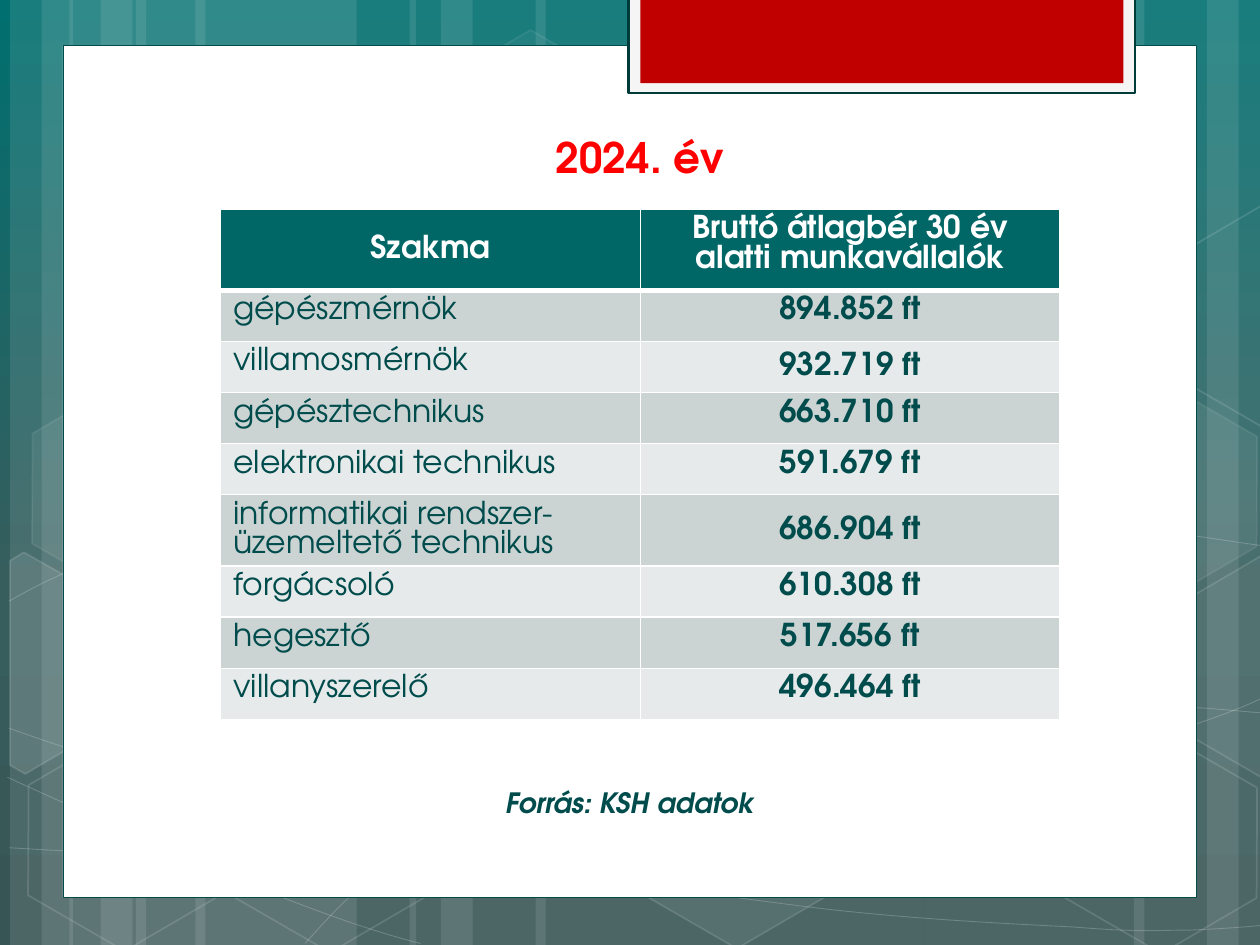
from math import cos, radians, sin

from lxml import etree
from pptx import Presentation
from pptx.dml.color import RGBColor
from pptx.enum.shapes import MSO_SHAPE
from pptx.enum.text import MSO_ANCHOR, PP_ALIGN
from pptx.oxml.ns import qn
from pptx.util import Cm, Pt

RECTANGLE, HEXAGON = MSO_SHAPE.RECTANGLE, MSO_SHAPE.HEXAGON
TOP, MIDDLE = MSO_ANCHOR.TOP, MSO_ANCHOR.MIDDLE
LEFT, CENTER = PP_ALIGN.LEFT, PP_ALIGN.CENTER

FONT = "TeX Gyre Adventor"
TILT = 30
WHITE = RGBColor(0xFF, 0xFF, 0xFF)
RED = RGBColor(0xFF, 0x00, 0x00)
DARK_RED = RGBColor(0xC0, 0x00, 0x00)
PALE_GREY = RGBColor(0xF5, 0xF5, 0xF5)
DARK_TEAL = RGBColor(0x00, 0x4C, 0x4C)
DEEP_TEAL = RGBColor(0x00, 0x3B, 0x3C)
HEADER_TEAL = RGBColor(0x00, 0x66, 0x66)
BANDS = RGBColor(0xCC, 0xD3, 0xD3), RGBColor(0xE7, 0xEA, 0xEA)
GRADIENT = (0, RGBColor(0x00, 0x6F, 0x6F)), (62, RGBColor(0x37, 0x5D, 0x5D)), (100, RGBColor(0x38, 0x55, 0x55))

# left, width
STRIPS = [
    (2.74, 4.45), (0.2, 1.27), (0.84, 2.11), (3.94, 4.45), (1.4, 1.27), (2.03, 2.11),
    (18.62, 4.45), (24.33, 1.27), (22.86, 2.11), (10.8, 7.82), (8.26, 1.27), (8.89, 2.11),
]
# start point, then three points for each Bezier segment
CURVES = [
    [(0.18, 17.09), (1.55, 17.17), (2.92, 17.25), (4.83, 17.22), (6.73, 17.2), (9.09, 17.15), (11.63, 16.89),
     (14.17, 16.64), (17.78, 16.13), (20.12, 15.67), (22.43, 15.19), (24.82, 14.43), (25.58, 14)],
    [(0.18, 12.12), (0.91, 11.71), (1.65, 11.33), (3.07, 10.95), (4.52, 10.57), (6.58, 10.01), (8.81, 9.83),
     (11.07, 9.65), (13.82, 9.63), (16.61, 9.83), (19.41, 10.03), (24.05, 10.82), (25.58, 11.02)],
    [(0.15, 15.67), (3.23, 17.07), (6.27, 18.47), (8.48, 19.02)],
    [(0.18, 14.68), (0.97, 14.96), (1.78, 15.24), (3.25, 15.65), (4.72, 16.03), (6.93, 16.66), (9.07, 17.09),
     (11.18, 17.53), (13.84, 17.98), (15.95, 18.24), (18.06, 18.52), (20.32, 18.62), (21.67, 18.69),
     (22.99, 18.8), (23.34, 18.75), (24, 18.75), (24.66, 18.72), (25.12, 18.69), (25.58, 18.64)],
    [(6.15, 19.02), (6.6, 18.52), (7.06, 18.01), (7.67, 17.55), (8.28, 17.09), (9.14, 16.61), (9.86, 16.23),
     (10.57, 15.88), (11, 15.72), (11.94, 15.47), (12.85, 15.21), (14.55, 14.86), (15.44, 14.68),
     (16.36, 14.5), (16.48, 14.5), (17.27, 14.45), (18.06, 14.38), (19.3, 14.3), (20.17, 14.27),
     (21.06, 14.25), (22.5, 14.27), (24.21, 14.27), (24.66, 14.3), (25.1, 14.35), (25.55, 14.38)],
]
# left, top, fill opacity, line opacity
HEXAGONS = [
    (8.48, 0.91, 4, 8), (12.62, 14.96, 6, 12), (0.28, 15.01, 0, 12), (0.36, 7.92, 7, 8),
    (4.42, 15.04, 0, 12), (19.13, 11.51, 10, 12), (21.18, 15.06, 0, 12), (21.18, 7.98, 7, 8),
]
# fill opacity, centre of the tilt, corners as they show
CUT_HEXAGONS = [
    (10, (0.91, 13.59), [(0.2, 11.3), (0.48, 11.13), (2.44, 12.24), (2.41, 14.48), (0.51, 15.6), (0.2, 15.42)]),
    (4, (25.02, 13.21), [(23.52, 12.32), (25.43, 11.2), (25.63, 11.33), (25.63, 15.57), (25.45, 15.67),
                         (23.52, 14.55)]),
    (0, (25.02, 6.12), [(23.52, 5.26), (25.43, 4.14), (25.65, 4.27), (25.63, 8.51), (25.45, 8.61),
                        (23.52, 7.49)]),
]
HEADER = "Szakma", "Bruttó átlagbér 30 év alatti munkavállalók"
WAGES = [
    ("gépészmérnök", "894.852 ft", TOP),
    ("villamosmérnök", "932.719 ft", MIDDLE),
    ("gépésztechnikus", "663.710 ft", TOP),
    ("elektronikai technikus", "591.679 ft", TOP),
    ("informatikai rendszer-üzemeltető technikus", "686.904 ft", MIDDLE),
    ("forgácsoló", "610.308 ft", TOP),
    ("hegesztő", "517.656 ft", TOP),
    ("villanyszerelő", "496.464 ft", TOP),
]


def paint(fill, color, opacity=100):
    """Give a solid fill with opacity in percent; zero means no fill."""
    if not opacity:
        fill.background()
        return
    fill.solid()
    fill.fore_color.rgb = color
    if opacity < 100:
        element = fill._xPr.find(qn("a:solidFill"))[0]
        etree.SubElement(element, qn("a:alpha"), val=str(opacity * 1000))


def style(shape, color=WHITE, opacity=100, line_color=WHITE, line_width=0, line_opacity=100):
    shape.shadow.inherit = False
    paint(shape.fill, color, opacity)
    paint(shape.line.fill, line_color, line_opacity if line_width else 0)
    if line_width:
        shape.line.width = Pt(line_width)


def add_preset(slide, kind, left, top, width, height, **look):
    shape = slide.shapes.add_shape(kind, Cm(left), Cm(top), Cm(width), Cm(height))
    style(shape, **look)
    return shape


def add_outline(slide, points, close, **look):
    corners = [(Cm(x), Cm(y)) for x, y in points]
    builder = slide.shapes.build_freeform(*corners[0])
    builder.add_line_segments(corners[1:], close=close)
    shape = builder.convert_to_shape()
    style(shape, **look)
    return shape


def bend(shape):
    """Turn every three line segments of an outline into one Bezier segment."""
    lines = list(shape._element.iter(qn("a:lnTo")))
    for start in range(0, len(lines), 3):
        group = lines[start:start + 3]
        curve = etree.Element(qn("a:cubicBezTo"))
        group[0].addprevious(curve)
        for line in group:
            curve.append(line[0])
            line.getparent().remove(line)


def turn(point, centre, degrees):
    x, y = point[0] - centre[0], point[1] - centre[1]
    cosine, sine = cos(radians(degrees)), sin(radians(degrees))
    return centre[0] + x * cosine - y * sine, centre[1] + x * sine + y * cosine


def write(frame, text, size=18, color=DARK_TEAL, bold=True, italic=False, align=CENTER):
    frame.word_wrap = True
    para = frame.paragraphs[0]
    para.alignment = align
    span = para.add_run()
    span.text = text
    font = span.font
    font.name, font.size, font.bold, font.italic = FONT, Pt(size), bold, italic
    font.color.rgb = color


def add_text(slide, text, left, top, width, height, **look):
    box = slide.shapes.add_textbox(Cm(left), Cm(top), Cm(width), Cm(height))
    write(box.text_frame, text, **look)


def fill_cell(cell, text, fill, anchor=TOP, bottom=1, **look):
    write(cell.text_frame, text, **look)
    cell.vertical_anchor = anchor
    properties = cell._tc.get_or_add_tcPr()
    for side, width in (("L", 1), ("R", 1), ("T", 1), ("B", bottom)):
        border = etree.SubElement(properties, qn(f"a:ln{side}"), w=str(Pt(width)))
        solid = etree.SubElement(border, qn("a:solidFill"))
        etree.SubElement(solid, qn("a:srgbClr"), val=str(WHITE))
    paint(cell.fill, fill)


def add_wage_table(slide):
    table = slide.shapes.add_table(len(WAGES) + 1, 2, Cm(4.45), Cm(4.22), Cm(16.92), Cm(9.95)).table
    for row in table.rows:
        row.height = Cm(1.03)
    table.rows[0].height = Cm(1.63)
    for column, (title, anchor) in enumerate(zip(HEADER, (MIDDLE, TOP))):
        fill_cell(table.cell(0, column), title, HEADER_TEAL, anchor, bottom=3, color=WHITE)
    for index, (trade, wage, anchor) in enumerate(WAGES):
        band = BANDS[index % 2]
        fill_cell(table.cell(index + 1, 0), trade, band, bold=False, align=LEFT)
        fill_cell(table.cell(index + 1, 1), wage, band, anchor)


def set_background(slide):
    fill = slide.background.fill
    fill.gradient()
    fill.gradient_angle = 270
    stops = fill._xPr.find(qn("a:gradFill")).find(qn("a:gsLst"))
    for stop in list(stops):
        stops.remove(stop)
    for position, color in GRADIENT:
        stop = etree.SubElement(stops, qn("a:gs"), pos=str(position * 1000))
        etree.SubElement(stop, qn("a:srgbClr"), val=str(color))


def add_decoration(slide):
    for left, width in STRIPS:
        add_preset(slide, RECTANGLE, left, 0, width, 19.05, opacity=10)
    for curve in CURVES:
        bend(add_outline(slide, curve, False, opacity=0, line_width=0.5, line_opacity=20))
    for left, top, opacity, line_opacity in HEXAGONS:
        hexagon = add_preset(slide, HEXAGON, left, top, 4.45, 3.86,
                             opacity=opacity, line_width=1, line_opacity=line_opacity)
        hexagon.adjustments[0] = 0.285
        hexagon.rotation = TILT
    for opacity, centre, corners in CUT_HEXAGONS:
        upright = [turn(corner, centre, -TILT) for corner in corners]
        add_outline(slide, upright, True, opacity=opacity, line_width=1, line_opacity=12).rotation = TILT


def main():
    deck = Presentation()
    deck.slide_width, deck.slide_height = Cm(25.4), Cm(19.05)
    slide = deck.slides.add_slide(deck.slide_layouts[6])
    set_background(slide)
    add_decoration(slide)
    add_preset(slide, RECTANGLE, 1.27, 0.91, 22.86, 17.18, line_color=DARK_TEAL, line_width=0.5)
    add_preset(slide, RECTANGLE, 12.67, -0.05, 10.21, 1.93,
               color=PALE_GREY, line_color=DEEP_TEAL, line_width=1.25)
    add_preset(slide, RECTANGLE, 12.91, -0.05, 9.74, 1.73, color=DARK_RED)
    add_wage_table(slide)
    add_text(slide, "Forrás: KSH adatok", 6.9, 15.72, 11.6, 1.63, size=16, italic=True)
    add_text(slide, "2024. év", 8.4, 2.53, 9, 1.27, size=24, color=RED)
    deck.save("out.pptx")


if __name__ == "__main__":
    main()
